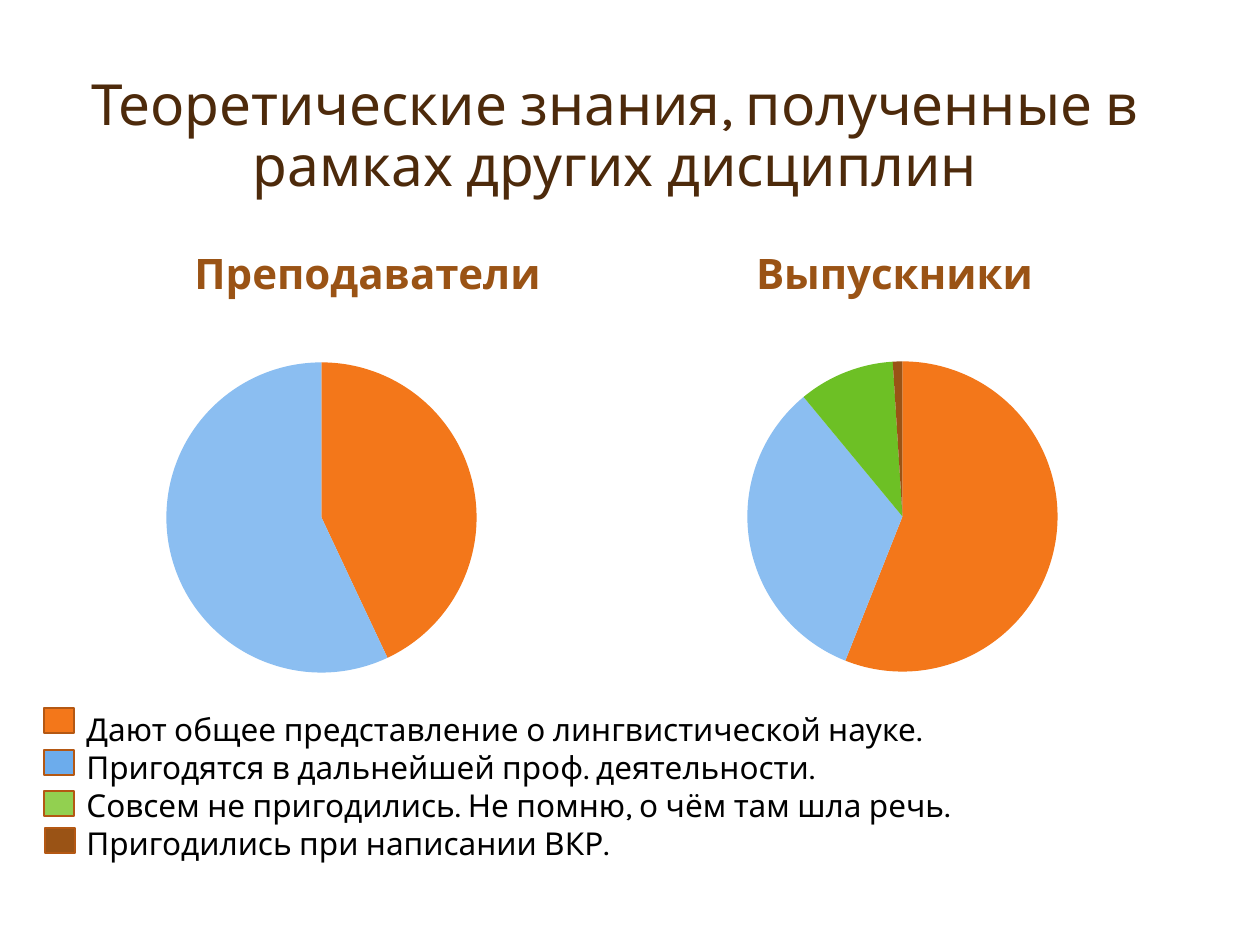
from pptx import Presentation
from pptx.chart.data import CategoryChartData as ChartData
from pptx.dml.color import RGBColor
from pptx.enum.chart import XL_CHART_TYPE as ChartType
from pptx.enum.shapes import MSO_SHAPE as Shape
from pptx.enum.text import MSO_ANCHOR as Anchor, MSO_AUTO_SIZE as AutoSize, PP_ALIGN as Align
from pptx.util import Emu, Pt

FONT = "Karla"
BROWN = "9A5315"
SLICE_COLORS = ["F3771A", "8BBEF1", "6DC025", BROWN]
LEGEND = [
    ("Дают общее представление о лингвистической науке.", "F3771A", (0, 4)),
    ("Пригодятся в дальнейшей проф. деятельности.", "6CACEC", (0, 46)),
    ("Совсем не пригодились. Не помню, о чём там шла речь.", "92D050", (0, 87)),
    ("Пригодились при написании ВКР.", BROWN, (1, 124)),
]


def px(length):
    return Emu(round(length * 914400 / 126))


def color(value):
    return RGBColor.from_string(value)


def place(shape, box):
    shape.left, shape.top, shape.width, shape.height = map(px, box)


def write(shape, lines, size, ink, bold=False, align=Align.LEFT, anchor=Anchor.TOP, spacing=None):
    frame = shape.text_frame
    frame.word_wrap = True
    frame.auto_size = AutoSize.NONE
    frame.vertical_anchor = anchor
    for index, line in enumerate(lines):
        para = frame.add_paragraph() if index else frame.paragraphs[0]
        para.alignment = align
        para.line_spacing = spacing
        span = para.add_run()
        span.text = line
        span.font.name = FONT
        span.font.size = Pt(size)
        span.font.bold = bold
        span.font.color.rgb = color(ink)


def add_title(page, box, text):
    title = page.shapes.title
    place(title, box)
    write(title, [text], 32.4, "4D2A0B", align=Align.CENTER, anchor=Anchor.BOTTOM, spacing=0.9)


def add_heading(page, box, text):
    heading = page.shapes.add_textbox(*map(px, box))
    write(heading, [text], 24, BROWN, bold=True, align=Align.CENTER, anchor=Anchor.BOTTOM)


def add_pie(page, box, values):
    data = ChartData()
    data.categories = ["1", "2", "3", "4"]
    data.add_series("Series 1", values)
    chart = page.shapes.add_chart(ChartType.PIE, *map(px, box), data).chart
    chart.has_legend = False
    chart.has_title = False
    chart.font.name = FONT
    chart.font.size = Pt(18)
    chart.font.color.rgb = color(BROWN)
    plot = chart.plots[0]
    plot.vary_by_categories = True
    for index, tint in enumerate(SLICE_COLORS):
        point = plot.series[0].points[index]
        point.format.fill.solid()
        point.format.fill.fore_color.rgb = color(tint)
        point.format.line.fill.background()


def add_legend(page, box):
    left, top, width, height = box
    labels = page.shapes.add_textbox(*map(px, (left + 30, top, width - 30, height)))
    write(labels, [text for text, _, _ in LEGEND], 18, "000000")
    for _, tint, (dx, dy) in LEGEND:
        swatch = page.shapes.add_shape(Shape.RECTANGLE, *map(px, (left + dx, top + dy, 30, 25)))
        swatch.shadow.inherit = False
        swatch.fill.solid()
        swatch.fill.fore_color.rgb = color(tint)
        swatch.line.color.rgb = color("B45813")
        swatch.line.width = Pt(1)


def main():
    deck = Presentation()
    deck.slide_width, deck.slide_height = px(1260), px(945)
    page = deck.slides.add_slide(deck.slide_layouts[5])
    add_title(page, (35, 37, 1160, 168), "Теоретические знания, полученные в рамках других дисциплин")
    add_heading(page, (111, 232, 513, 72), "Преподаватели")
    add_pie(page, (111, 345, 421, 345), (43, 57, None, None))
    add_heading(page, (638, 232, 513, 72), "Выпускники")
    add_pie(page, (689, 344, 427, 345), (56, 33, 10, 1))
    add_legend(page, (44, 704, 1201, 165))
    deck.save("out.pptx")


if __name__ == "__main__":
    main()
